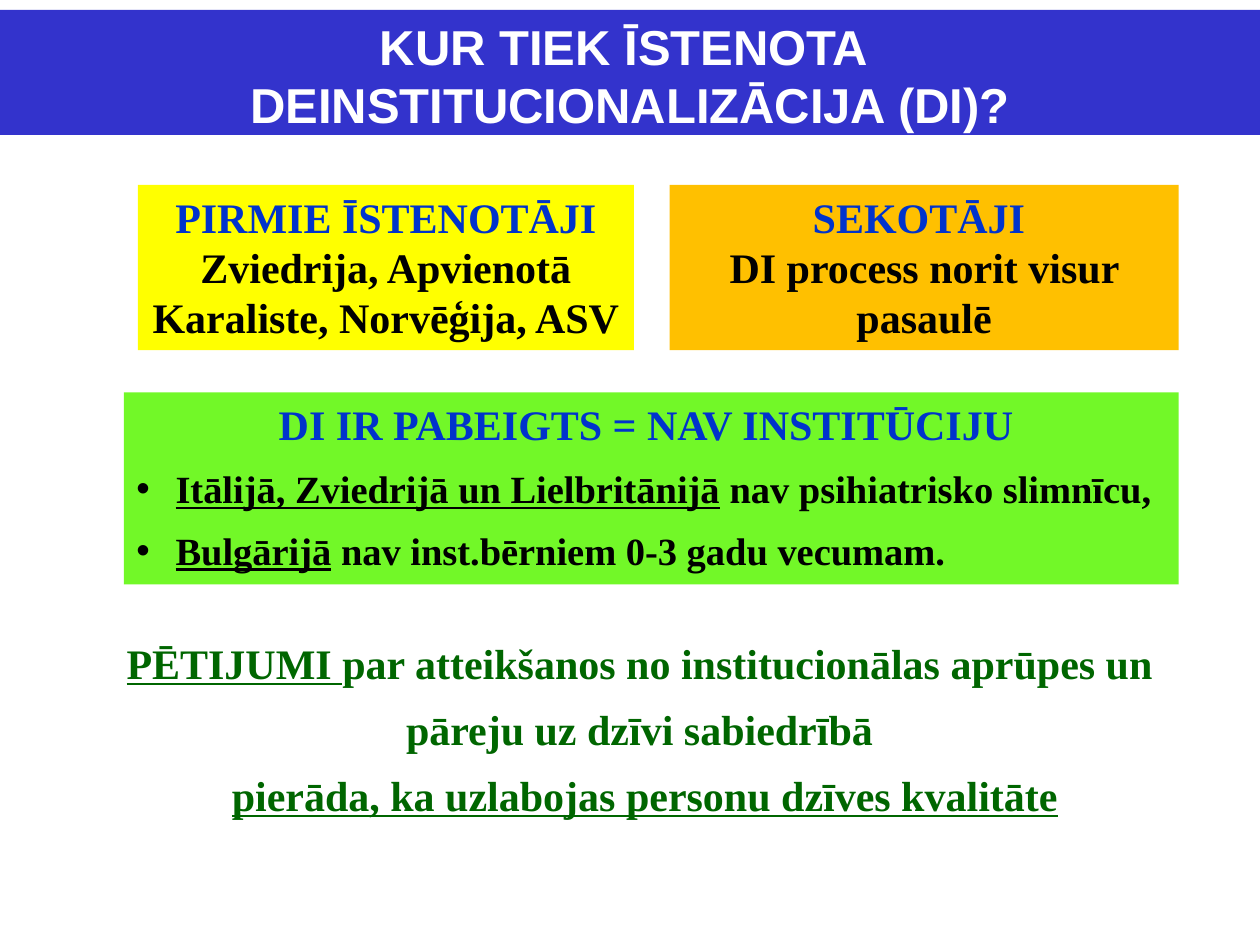
from lxml.etree import SubElement
from pptx import Presentation
from pptx.dml.color import RGBColor
from pptx.enum.shapes import MSO_SHAPE
from pptx.enum.text import MSO_ANCHOR, MSO_AUTO_SIZE, PP_ALIGN
from pptx.oxml.ns import qn
from pptx.util import Cm, Pt

BLUE, BLACK, GREEN = "0033CC", "000000", "006600"


def rgb(value):
    return RGBColor.from_string(value)


def apply(target, values):
    for name, value in values.items():
        setattr(target, name, value)


class SlideBuilder:
    base = {"name": "Times New Roman", "size": Pt(24), "bold": True}
    title = {"name": "Arial", "size": Pt(28), "bold": True}
    spacing = Pt(4.5)
    indent = Cm(0.79)

    def __init__(self, slide):
        self.s = slide

    def panel(self, left, top, width, height, fill, grow=True):
        """Add a filled rectangle and return its text frame."""
        sp = self.s.shapes.add_shape(
            MSO_SHAPE.RECTANGLE, Cm(left), Cm(top), Cm(width), Cm(height))
        sp.shadow.inherit = False
        sp.fill.solid()
        sp.fill.fore_color.rgb = rgb(fill)
        sp.line.fill.background()
        return self.frame(sp, grow)

    def text_box(self, left, top, width, height):
        sp = self.s.shapes.add_textbox(Cm(left), Cm(top), Cm(width), Cm(height))
        return self.frame(sp, True)

    def frame(self, sp, grow):
        tf = sp.text_frame
        fit = MSO_AUTO_SIZE.SHAPE_TO_FIT_TEXT if grow else MSO_AUTO_SIZE.NONE
        apply(tf, {"word_wrap": True, "vertical_anchor": MSO_ANCHOR.TOP,
                   "auto_size": fit})
        return tf

    def paragraph(self, tf, runs, color, font=None, spaced=False, bullet=False):
        """Add one paragraph; runs are (text, underlined) pairs."""
        first = not tf.paragraphs[0].runs
        p = tf.paragraphs[0] if first else tf.add_paragraph()
        p.alignment = PP_ALIGN.LEFT if bullet else PP_ALIGN.CENTER
        if bullet:
            self.bullet(p)
        if spaced:
            p.space_after = self.spacing
            if not first:
                p.space_before = self.spacing
        for text, underlined in runs:
            r = p.add_run()
            r.text = text
            apply(r.font, {**self.base, **(font or {}), "underline": underlined})
            r.font.color.rgb = rgb(color)

    def bullet(self, p):
        pPr = p._p.get_or_add_pPr()
        pPr.set("marL", str(self.indent))
        pPr.set("indent", str(-self.indent))
        clr = SubElement(pPr, qn("a:buClr"))
        SubElement(clr, qn("a:srgbClr"), val=BLACK)
        SubElement(pPr, qn("a:buFont"), typeface="Arial")
        SubElement(pPr, qn("a:buChar"), char="•")


def main():
    prs = Presentation()
    prs.slide_width, prs.slide_height = Cm(25.4), Cm(19.05)
    b = SlideBuilder(prs.slides.add_slide(prs.slide_layouts[6]))

    # Title band
    tf = b.panel(0, 0.2, 25.4, 2.52, "3333CC", grow=False)
    for line in ("KUR TIEK ĪSTENOTA ", "DEINSTITUCIONALIZĀCIJA (DI)?"):
        b.paragraph(tf, [(line, False)], "FFFFFF", b.title)

    # First adopters and followers
    groups = [
        (2.78, 10, "FFFF00", "PIRMIE ĪSTENOTĀJI",
         "Zviedrija, Apvienotā Karaliste, Norvēģija, ASV"),
        (13.5, 10.26, "FFC000", "SEKOTĀJI ", "DI process norit visur pasaulē"),
    ]
    for left, width, fill, heading, body in groups:
        tf = b.panel(left, 3.73, width, 3.33, fill)
        b.paragraph(tf, [(heading, False)], BLUE)
        b.paragraph(tf, [(body, False)], BLACK)

    # Countries without institutions
    tf = b.panel(2.5, 7.91, 21.26, 3.87, "72F828")
    b.paragraph(tf, [("DI IR PABEIGTS = NAV INSTITŪCIJU ", False)], BLUE,
                spaced=True)
    for place, fact in (
            ("Itālijā, Zviedrijā un Lielbritānijā", " nav psihiatrisko slimnīcu,"),
            ("Bulgārijā", " nav inst.bērniem 0-3 gadu vecumam.")):
        b.paragraph(tf, [(place, True), (fact, False)], BLACK,
                    {"size": Pt(22)}, spaced=True, bullet=True)

    # Research conclusion
    tf = b.text_box(1.7, 12.72, 22.6, 4.04)
    for runs in (
            [("PĒTIJUMI ", True),
             ("par atteikšanos no institucionālas aprūpes un ", False)],
            [("pāreju uz dzīvi sabiedrībā ", False)],
            [("pierāda, ka uzlabojas personu dzīves kvalitāte", True)]):
        b.paragraph(tf, runs, GREEN, spaced=True)

    prs.save("out.pptx")


if __name__ == "__main__":
    main()
